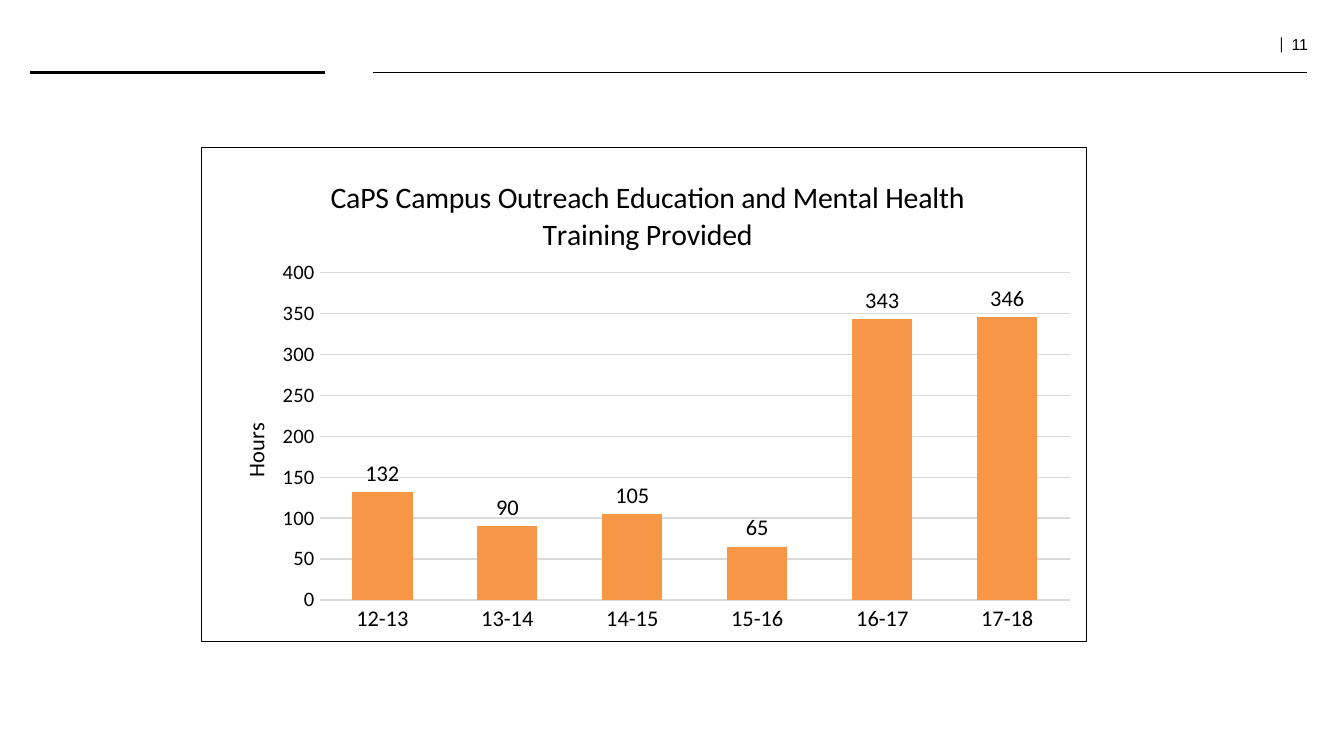
from lxml import etree
from pptx import Presentation
from pptx import util as u
from pptx.chart.data import CategoryChartData
from pptx.dml.color import RGBColor
from pptx.enum import chart as charts, shapes, text
from pptx.oxml import parse_xml
from pptx.oxml.ns import nsdecls, qn

TITLE = "CaPS Campus Outreach Education and Mental Health Training Provided"
AXIS_TITLE = "Hours"
HOURS = {"12-13": 132, "13-14": 90, "14-15": 105, "15-16": 65, "16-17": 343, "17-18": 346}
PAGE_MARK = [("|  ", "Cambria", 9), ("11", "Arial", 8.5)]
RULES = [(0.56, 6.15, 2), (7.04, 24.71, 1)]
RULE_TOP = 1.37
THEME = {
    "ink": RGBColor.from_string("000000"),
    "grid": RGBColor.from_string("D9D9D9"),
    "bar": RGBColor.from_string("F79646"),
    "font": "Calibri",
    "title": 16,
    "label": 12,
    "scale": 11,
    "hairline": 0.75,
}


def style(font, size, name=THEME["font"]):
    font.size = u.Pt(size)
    font.name = name
    font.bold = False
    font.color.rgb = THEME["ink"]


def draw_line(line, color, width):
    line.color.rgb = color
    line.width = u.Pt(width)


def place(element, **position):
    layout = element.find(qn("c:layout"))
    if layout is None:
        layout = etree.Element(qn("c:layout"))
        tx = element.find(qn("c:tx"))
        element.insert(0 if tx is None else 1, layout)
    for child in list(layout):
        layout.remove(child)
    manual = etree.SubElement(layout, qn("c:manualLayout"))
    if "w" in position:
        etree.SubElement(manual, qn("c:layoutTarget")).set("val", "inner")
    for axis in "xy":
        etree.SubElement(manual, qn(f"c:{axis}Mode")).set("val", "edge")
    for key, value in position.items():
        etree.SubElement(manual, qn(f"c:{key}")).set("val", str(value))


def write_title(owner, words, size, **position):
    title = owner.chart_title if hasattr(owner, "chart_title") else owner.axis_title
    title.text_frame.text = words
    style(title.text_frame.paragraphs[0].font, size)
    place(title._element, **position)
    return title


def add_header(slide):
    box = slide.shapes.add_textbox(u.Cm(22.38), u.Cm(0.58), u.Cm(2.59), u.Cm(0.56))
    frame = box.text_frame
    frame.word_wrap = True
    mark = frame.paragraphs[0]
    mark.alignment = text.PP_ALIGN.RIGHT
    mark.line_spacing = 0.8
    for words, name, size in PAGE_MARK:
        run = mark.add_run()
        run.text = words
        style(run.font, size, name)
    for left, right, width in RULES:
        rule = slide.shapes.add_connector(
            shapes.MSO_CONNECTOR.STRAIGHT, u.Cm(left), u.Cm(RULE_TOP), u.Cm(right), u.Cm(RULE_TOP))
        draw_line(rule.line, THEME["ink"], width)
        etree.SubElement(rule._element.spPr, qn("a:effectLst"))


def add_hours_chart(slide):
    data = CategoryChartData()
    data.categories = list(HOURS)
    data.add_series("Series 1", list(HOURS.values()))
    chart = slide.shapes.add_chart(
        charts.XL_CHART_TYPE.COLUMN_CLUSTERED,
        u.Cm(3.79), u.Cm(2.77), u.Cm(16.76), u.Cm(9.37), data).chart
    style(chart.font, 10, "Arial")
    chart.has_legend = False
    write_title(chart, TITLE, THEME["title"], x=0.14, y=0.05)

    plot = chart.plots[0]
    plot.gap_width = 107
    plot.overlap = -27
    plot.vary_by_categories = False
    bars = plot.series[0]
    bars.format.fill.solid()
    bars.format.fill.fore_color.rgb = THEME["bar"]
    labels = bars.data_labels
    labels.show_value = True
    labels.position = charts.XL_LABEL_POSITION.OUTSIDE_END
    style(labels.font, THEME["label"])

    years, scale = chart.category_axis, chart.value_axis
    for axis, size in ((years, THEME["label"]), (scale, THEME["scale"])):
        axis.major_tick_mark = axis.minor_tick_mark = charts.XL_TICK_MARK.NONE
        style(axis.tick_labels.font, size)
    draw_line(years.format.line, THEME["grid"], THEME["hairline"])
    scale.format.line.fill.background()
    scale.minimum_scale, scale.maximum_scale, scale.major_unit = 0, 400, 50
    draw_line(scale.major_gridlines.format.line, THEME["grid"], THEME["hairline"])
    hours = write_title(scale, AXIS_TITLE, THEME["label"], x=0.04, y=0.55)
    turn = hours.text_frame._txBody.find(qn("a:bodyPr"))
    turn.set("rot", "-5400000")
    turn.set("vert", "horz")

    body = chart._chartSpace.find(qn("c:chart"))
    place(body.find(qn("c:plotArea")), x=0.134, y=0.254, w=0.847, h=0.662)
    body.addnext(parse_xml(
        f'<c:spPr {nsdecls("c", "a")}><a:noFill/><a:ln w="{u.Pt(THEME["hairline"])}">'
        f'<a:solidFill><a:srgbClr val="{THEME["ink"]}"/></a:solidFill></a:ln></c:spPr>'))


def main():
    deck = Presentation()
    deck.slide_width, deck.slide_height = u.Cm(25.4), u.Cm(14.29)
    slide = deck.slides.add_slide(deck.slide_layouts[6])
    add_header(slide)
    add_hours_chart(slide)
    deck.save("out.pptx")


if __name__ == "__main__":
    main()
